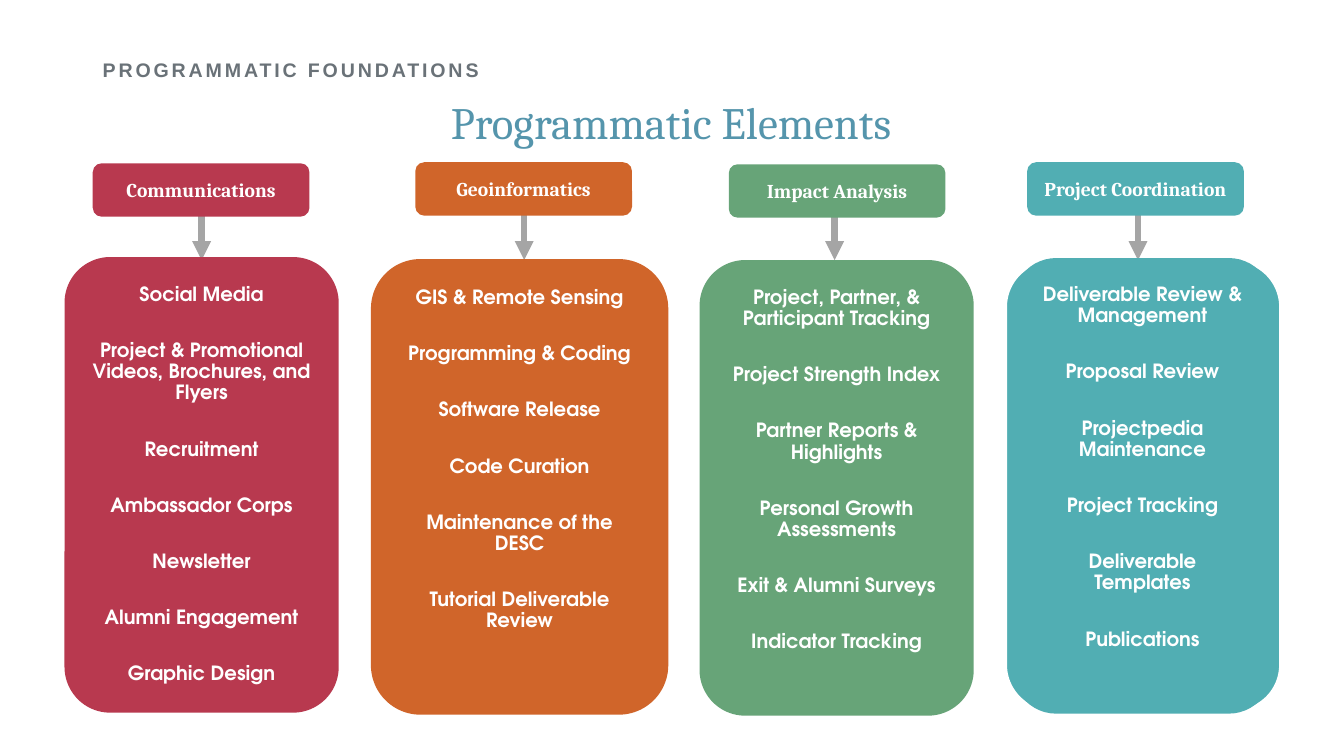
from dataclasses import dataclass

import pptx
import pptx.dml.color
import pptx.enum.shapes
import pptx.enum.text
import pptx.oxml
import pptx.oxml.ns
import pptx.util

Pt = pptx.util.Pt
ALIGN = pptx.enum.text.PP_ALIGN
ANCHOR = pptx.enum.text.MSO_ANCHOR
HEADING_FONT = "Cambria"
LIST_FONT = "TeX Gyre Adventor"
WHITE = "FFFFFF"
HEADER_SIZE = (154.8, 38.16)
PANEL_HEIGHT = 325.44
ARROW_TOP, ARROW_BOTTOM = 129.6, 185.76


@dataclass
class Column:
    """One programmatic element; positions and widths are in points."""
    name: str
    color: str
    arrow_x: float
    header_at: tuple
    panel_at: tuple
    panel_width: float
    items: list


COLUMNS = [
    Column("Communications", "B8394F", 144, (66.24, 116.64), (46.08, 183.6), 195.84, [
        "Social Media", "Project & Promotional Videos, Brochures, and Flyers",
        "Recruitment", "Ambassador Corps", "Newsletter", "Alumni Engagement",
        "Graphic Design"]),
    Column("Geoinformatics", "D0652A", 374.4, (296.64, 115.92), (264.96, 185.04), 212.4, [
        "GIS & Remote Sensing", "Programming & Coding", "Software Release",
        "Code Curation", "Maintenance of the DESC", "Tutorial Deliverable Review"]),
    Column("Impact Analysis", "67A478", 596.16, (520.56, 117.36), (499.68, 185.76), 195.84, [
        "Project, Partner, & Participant Tracking", "Project Strength Index",
        "Partner Reports & Highlights", "Personal Growth Assessments",
        "Exit & Alumni Surveys", "Indicator Tracking"]),
    Column("Project Coordination", "51AEB3", 812.88, (733.68, 115.92), (723.6, 184.32), 185.04, [
        "Deliverable Review & Management", "Proposal Review",
        "Projectpedia Maintenance", "Project Tracking", "Deliverable Templates",
        "Publications"]),
]


def rgb(color):
    return pptx.dml.color.RGBColor.from_string(color)


def write_text(box, lines, font, size=14, color=WHITE, bold=False, align=ALIGN.CENTER,
               anchor=ANCHOR.MIDDLE, inset=None, line_spacing=None, before=None,
               gap=None, tracking=None):
    """Write one paragraph per line; gap is the space after each, tracking is in points."""
    frame = box.text_frame
    frame.word_wrap = True
    frame.vertical_anchor = anchor
    if inset is not None:
        frame.margin_left = frame.margin_right = Pt(inset)
        frame.margin_top = frame.margin_bottom = Pt(inset)
    for index, line in enumerate(lines):
        para = frame.add_paragraph() if index else frame.paragraphs[0]
        para.alignment = align
        if line_spacing is not None:
            para.line_spacing = line_spacing
        if before is not None:
            para.space_before = Pt(before)
        if gap is not None:
            para.space_after = Pt(gap)
        span = para.add_run()
        span.text = line
        span.font.name = font
        span.font.size = Pt(size)
        span.font.bold = bold
        span.font.color.rgb = rgb(color)
        if tracking is not None:
            span.font._element.set("spc", str(tracking * 100))


def add_text_box(page, left, top, width, height, text, **text_format):
    box = page.shapes.add_textbox(Pt(left), Pt(top), Pt(width), Pt(height))
    write_text(box, [text], **text_format)


def add_rounded_box(page, left, top, width, height, color, outline=None):
    box = page.shapes.add_shape(pptx.enum.shapes.MSO_SHAPE.ROUNDED_RECTANGLE,
                                Pt(left), Pt(top), Pt(width), Pt(height))
    box.shadow.inherit = False
    box.fill.solid()
    box.fill.fore_color.rgb = rgb(color)
    if outline:
        box.line.color.rgb = rgb(outline)
        box.line.width = Pt(1.5)
    else:
        box.line.fill.background()
    return box


def add_down_arrow(page, x):
    arrow = page.shapes.add_connector(pptx.enum.shapes.MSO_CONNECTOR.STRAIGHT,
                                      Pt(x), Pt(ARROW_TOP), Pt(x), Pt(ARROW_BOTTOM))
    arrow.line.color.rgb = rgb("A5A5A5")
    arrow.line.width = Pt(4.5)
    namespace = pptx.oxml.ns.nsdecls("a")
    arrow.line._get_or_add_ln().append(
        pptx.oxml.parse_xml(f'<a:tailEnd {namespace} type="triangle"/>'))
    arrow._element.spPr.append(pptx.oxml.parse_xml(f"<a:effectLst {namespace}/>"))


def add_column(page, column):
    add_down_arrow(page, column.arrow_x)
    header = add_rounded_box(page, *column.header_at, *HEADER_SIZE, column.color)
    write_text(header, [column.name], font=HEADING_FONT, bold=True)
    if column is COLUMNS[-1]:
        backing = add_rounded_box(page, 718.56, 186.48, 195.84, 321.12, column.color,
                                  outline=WHITE)
        backing.rotation = 180
    panel = add_rounded_box(page, *column.panel_at, column.panel_width, PANEL_HEIGHT,
                            column.color)
    write_text(panel, column.items, font=LIST_FONT, bold=True, anchor=ANCHOR.TOP,
               inset=10, line_spacing=0.9, gap=25)


def main():
    deck = pptx.Presentation()
    deck.slide_width, deck.slide_height = Pt(960), Pt(540)
    page = deck.slides.add_slide(deck.slide_layouts[6])
    for column in COLUMNS:
        add_column(page, column)
    add_text_box(page, 11.52, 56.88, 936, 64.8, "Programmatic Elements",
                 font=HEADING_FONT, size=32, color="5595AC", line_spacing=0.9, before=10)
    add_text_box(page, 66.24, 28.8, 828, 44.64, "PROGRAMMATIC FOUNDATIONS",
                 font="Arial", color="6A7278", bold=True, align=ALIGN.LEFT,
                 line_spacing=0.9, tracking=2)
    deck.save("out.pptx")


if __name__ == "__main__":
    main()
